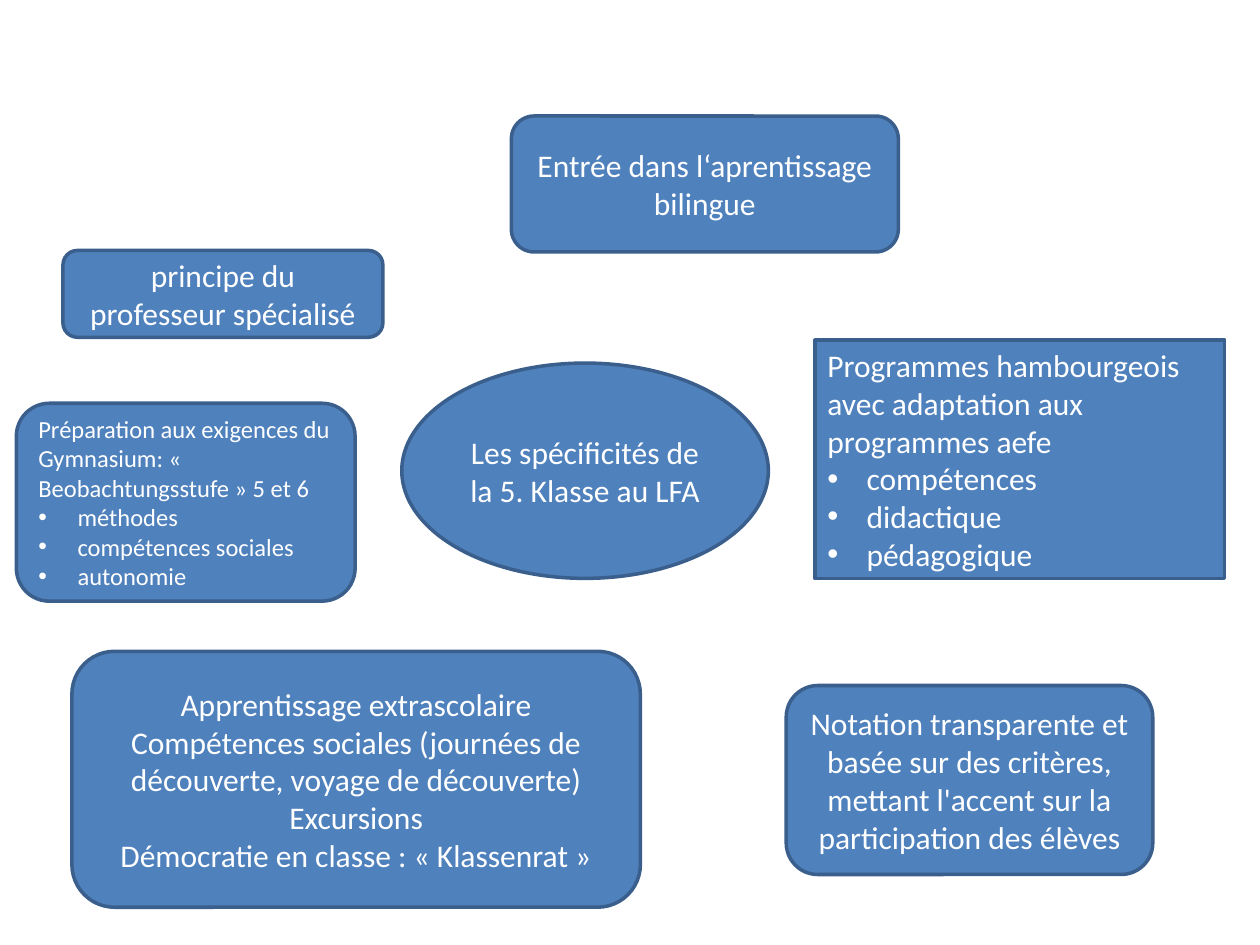
import pptx
import pptx.dml.color
import pptx.enum.shapes
import pptx.enum.text
import pptx.util
from lxml import etree
from pptx.util import Cm

BLUE = pptx.dml.color.RGBColor(0x4F, 0x81, 0xBD)
DARK_BLUE = pptx.dml.color.RGBColor(0x3A, 0x5F, 0x8C)
WHITE = pptx.dml.color.RGBColor(0xFF, 0xFF, 0xFF)

SHAPE = pptx.enum.shapes.MSO_SHAPE
ALIGN = pptx.enum.text.PP_ALIGN
DRAWING_NS = "http://schemas.openxmlformats.org/drawingml/2006/main"


class MindMap:
    """Holds the common style and the slide being filled."""

    font_name = "Calibri"
    bullet_indent = Cm(0.79)

    def __init__(self, slide):
        self.slide = slide

    def bubble(self, left, top, width, height, lines, bullets=(), size=18,
               align=ALIGN.CENTER, kind=SHAPE.ROUNDED_RECTANGLE):
        """Add a filled shape with plain lines followed by bulleted ones."""
        shape = self.slide.shapes.add_shape(
            kind, Cm(left), Cm(top), Cm(width), Cm(height))
        shape.shadow.inherit = False
        shape.fill.solid()
        shape.fill.fore_color.rgb = BLUE
        shape.line.color.rgb = DARK_BLUE
        shape.line.width = pptx.util.Pt(2)

        frame = shape.text_frame
        frame.word_wrap = True
        frame.vertical_anchor = pptx.enum.text.MSO_ANCHOR.MIDDLE
        frame.text = "\n".join([*lines, *bullets])
        for number, paragraph in enumerate(frame.paragraphs):
            paragraph.alignment = align
            if number >= len(lines):
                self.bullet(paragraph)
            paragraph.font.name = self.font_name
            paragraph.font.size = pptx.util.Pt(size)
            paragraph.font.color.rgb = WHITE
        return shape

    def bullet(self, paragraph):
        """Give a paragraph a round bullet and a hanging indent."""
        properties = paragraph._p.get_or_add_pPr()
        properties.set("marL", str(self.bullet_indent))
        properties.set("indent", str(-self.bullet_indent))
        etree.SubElement(properties, f"{{{DRAWING_NS}}}buFont", typeface="Arial")
        etree.SubElement(properties, f"{{{DRAWING_NS}}}buChar", char="•")


def main():
    presentation = pptx.Presentation()
    presentation.slide_width = Cm(25.4)
    presentation.slide_height = Cm(19.05)
    mind_map = MindMap(presentation.slides.add_slide(presentation.slide_layouts[6]))

    # Central topic
    mind_map.bubble(8.1, 7.32, 7.39, 4.34,
                    ["Les spécificités de la 5. Klasse au LFA"], kind=SHAPE.OVAL)

    # Curriculum, with square corners
    curriculum = mind_map.bubble(
        16.43, 6.86, 8.26, 4.8,
        ["Programmes hambourgeois avec adaptation aux programmes aefe"],
        ["compétences", "didactique", "pédagogique"], align=ALIGN.LEFT)
    curriculum.adjustments[0] = 0

    # Grading
    mind_map.bubble(15.85, 13.82, 7.39, 3.81,
                    ["Notation transparente et basée sur des critères, "
                     "mettant l'accent sur la participation des élèves"])

    # Learning outside school
    mind_map.bubble(1.45, 13.13, 11.46, 5.16,
                    ["Apprentissage extrascolaire",
                     "Compétences sociales (journées de découverte, "
                     "voyage de découverte)",
                     "Excursions",
                     "Démocratie en classe : « Klassenrat »"])

    # Preparation for the Gymnasium
    mind_map.bubble(0.33, 8.13, 6.83, 3.99,
                    ["Préparation aux exigences du Gymnasium: "
                     "« Beobachtungsstufe » 5 et 6"],
                    ["méthodes", "compétences sociales", "autonomie"],
                    size=14, align=ALIGN.LEFT)

    # Specialist teachers and bilingual learning
    mind_map.bubble(1.27, 5.05, 6.45, 1.75, ["principe du professeur spécialisé"])
    mind_map.bubble(10.31, 2.34, 7.8, 2.74, ["Entrée dans l‘aprentissage bilingue"])

    presentation.save("out.pptx")


if __name__ == "__main__":
    main()
